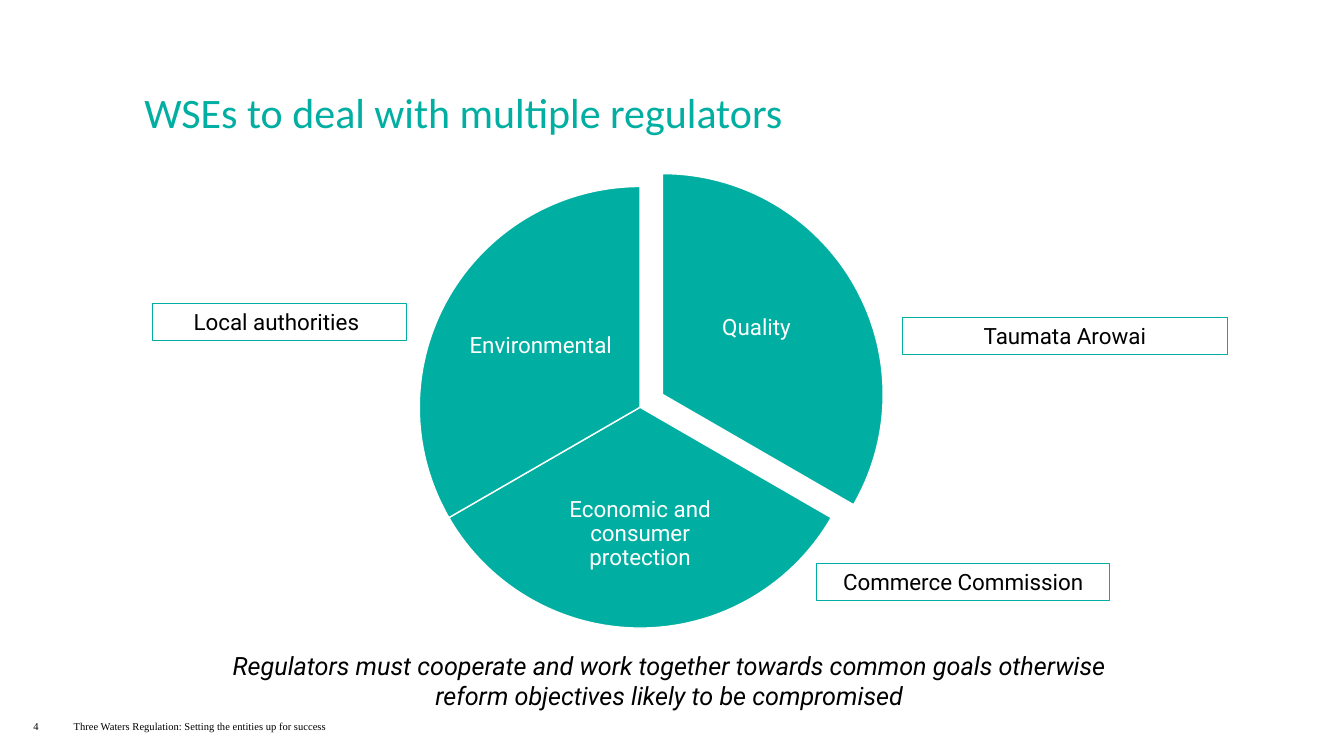
import math
import pptx
import pptx.util
import pptx.dml.color
import pptx.enum.shapes
import pptx.enum.text
from pptx.util import Pt

THEME = {
    "teal": "00AFA2", "white": "FFFFFF", "black": "000000",
    "heading": "Calibri", "body": "Roboto", "small": "Times New Roman",
    "title_size": 30, "label_size": 16, "message_size": 18, "footer_size": 7.5,
}
TITLE = "WSEs to deal with multiple regulators"
MESSAGE = ("Regulators must cooperate and work together towards common goals "
           "otherwise reform objectives likely to be compromised")
FOOTERS = [
    ("Three Waters Regulation: Setting the entities up for success", (52.6, 510.5, 324, 16.6)),
    ("4", (23.8, 510.5, 20.2, 16.6)),
]
SLICES = [
    ("Quality", 18.4, (486.7, 182.2, 107.3, 105.1)),
    ("Economic and consumer protection", 0, (385.9, 332.6, 142.6, 97.9)),
    ("Environmental ", 0, (332.6, 195.1, 107.3, 105.1)),
]
REGULATORS = [
    ("Taumata Arowai", (644.4, 226.8, 232.6, 26.6)),
    ("Local authorities ", (108.7, 216.7, 181.4, 26.6)),
    ("Commerce Commission", (583.2, 402.5, 209.5, 26.6)),
]
PIE_LEFT, PIE_TOP, PIE_DIAMETER = 299.5, 133.2, 315.4
FIRST_ANGLE = 270
DEGREE = 0.6

deck = pptx.Presentation()
deck.slide_width, deck.slide_height = Pt(960), Pt(540)
slide = deck.slides.add_slide(deck.slide_layouts[6])


def colour(name):
    return pptx.dml.color.RGBColor.from_string(THEME[name])


def write(holder, text, size, font, ink, centred=True, insets=(7.2, 3.6),
          spacing=None, italic=None, middle=True):
    frame = holder.text_frame
    frame.text = text
    frame.word_wrap = True
    anchors = pptx.enum.text.MSO_ANCHOR
    frame.vertical_anchor = anchors.MIDDLE if middle else anchors.TOP
    frame.margin_left = frame.margin_right = Pt(insets[0])
    frame.margin_top = frame.margin_bottom = Pt(insets[1])
    paragraph = frame.paragraphs[0]
    aligns = pptx.enum.text.PP_ALIGN
    paragraph.alignment = aligns.CENTER if centred else aligns.LEFT
    if spacing:
        paragraph.line_spacing = spacing
    run = paragraph.runs[0]
    run.font.size = Pt(THEME[size])
    run.font.name = THEME[font]
    run.font.color.rgb = colour(ink)
    run.font.italic = italic


def add_text(text, box, *style, **options):
    write(slide.shapes.add_textbox(*map(Pt, box)), text, *style, **options)


def add_outlined(kind, box, fill, line, width):
    shape = slide.shapes.add_shape(kind, *map(Pt, box))
    shape.shadow.inherit = False
    if fill:
        shape.fill.solid()
        shape.fill.fore_color.rgb = colour(fill)
    else:
        shape.fill.background()
    shape.line.color.rgb = colour(line)
    shape.line.width = Pt(width)
    return shape


def add_slice(index, label, explosion, label_box):
    sweep = 360 / len(SLICES)
    start = FIRST_ANGLE + index * sweep
    middle = math.radians(start + sweep / 2)
    box = (PIE_LEFT + explosion * math.cos(middle),
           PIE_TOP + explosion * math.sin(middle), PIE_DIAMETER, PIE_DIAMETER)
    wedge = add_outlined(pptx.enum.shapes.MSO_SHAPE.PIE, box, "teal", "white", 1)
    wedge.adjustments[0] = start % 360 * DEGREE
    wedge.adjustments[1] = (start + sweep) % 360 * DEGREE
    add_text(label, label_box, "label_size", "body", "white",
             insets=(1.6, 1.6), spacing=0.9)


add_text(TITLE, (96, 62, 729, 40), "title_size", "heading", "teal",
         centred=False, spacing=0.9)
for footer, box in FOOTERS:
    add_text(footer, box, "footer_size", "small", "black",
             centred=False, insets=(0, 3.6))
for index, (label, explosion, label_box) in enumerate(SLICES):
    add_slice(index, label, explosion, label_box)
for regulator, box in REGULATORS:
    frame = add_outlined(pptx.enum.shapes.MSO_SHAPE.RECTANGLE, box, None, "teal", 0.75)
    write(frame, regulator, "label_size", "body", "black", middle=False)
add_text(MESSAGE, (131.8, 460.8, 692.6, 51.1), "message_size", "body", "black",
         italic=True, middle=False)

deck.save("out.pptx")
